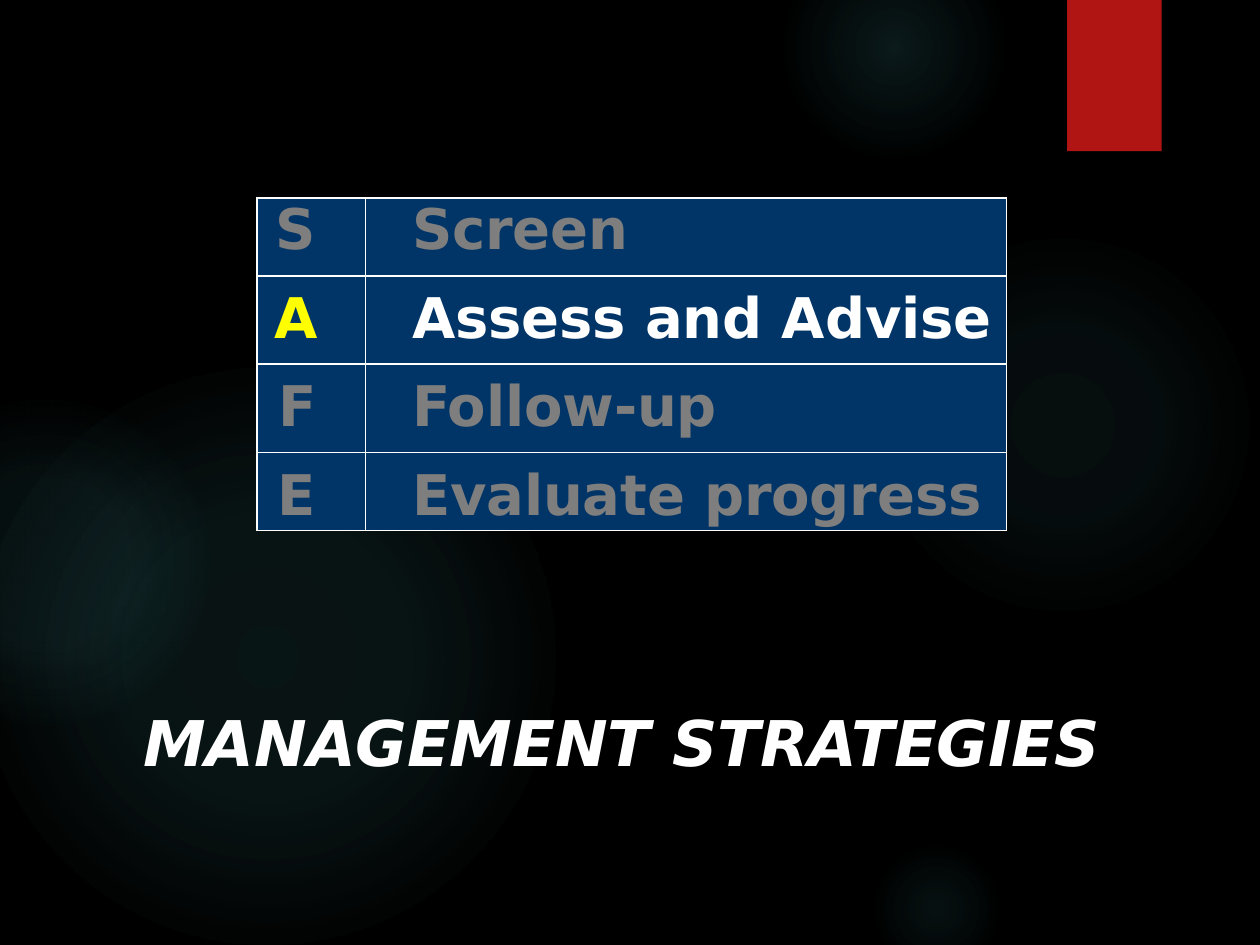
from lxml.etree import SubElement
from pptx import Presentation
from pptx.dml.color import RGBColor
from pptx.enum.shapes import MSO_SHAPE
from pptx.oxml import parse_xml
from pptx.oxml.ns import nsdecls, qn
from pptx.util import Inches, Pt

COLORS = {
    "background": "000000",
    "glow": "50B9C1",
    "ribbon": "B01513",
    "panel": "013567",
    "muted": "7E7E7E",
    "accent": "FFFF00",
    "white": "FFFFFF",
}


def rgb(name):
    return RGBColor.from_string(COLORS[name])


class SlideBuilder:
    font = "DejaVu Sans"

    def __init__(self, slide):
        self.s = slide
        fill = slide.background.fill
        fill.solid()
        fill.fore_color.rgb = rgb("background")

    def shape(self, kind, left, top, width, height, color):
        sp = self.s.shapes.add_shape(
            kind, Inches(left), Inches(top), Inches(width), Inches(height))
        sp.shadow.inherit = False
        sp.fill.solid()
        sp.fill.fore_color.rgb = rgb(color)
        sp.line.fill.background()
        return sp

    def glow(self, left, top, size, stops):
        """Circle fading outwards; stops are (position %, opacity %)."""
        sp = self.shape(MSO_SHAPE.OVAL, left, top, size, size, "glow")
        gs = "".join(
            f'<a:gs pos="{pos * 1000}"><a:srgbClr val="{COLORS["glow"]}">'
            f'<a:alpha val="{alpha * 1000}"/></a:srgbClr></a:gs>'
            for pos, alpha in stops)
        grad = parse_xml(
            f'<a:gradFill {nsdecls("a")} rotWithShape="1"><a:gsLst>{gs}</a:gsLst>'
            '<a:path path="circle"><a:fillToRect l="50000" t="50000" '
            'r="50000" b="50000"/></a:path></a:gradFill>')
        spPr = sp.fill._xPr
        spPr.replace(spPr.find(qn("a:solidFill")), grad)

    def ribbon(self, left, top, width, height):
        sp = self.shape(MSO_SHAPE.RECTANGLE, left, top, width, height, "ribbon")
        effects = sp._element.spPr.find(qn("a:effectLst"))
        shadow = SubElement(
            effects, qn("a:outerShdw"), blurRad=str(Pt(3)), dist=str(Pt(2)),
            dir="5400000", rotWithShape="0")
        clr = SubElement(shadow, qn("a:srgbClr"), val=COLORS["background"])
        SubElement(clr, qn("a:alpha"), val="45000")

    def text(self, p, text, size, color, indent, before, spacing=0, italic=False):
        p.space_before = Pt(before)
        p._p.get_or_add_pPr().set("marL", str(Inches(indent)))
        r = p.add_run()
        r.text = text
        f = r.font
        f.name, f.size, f.bold, f.italic = self.font, Pt(size), True, italic
        f.color.rgb = rgb(color)
        r._r.get_or_add_rPr().set("spc", str(round(spacing * 100)))

    def title(self, text, left, top, width, height):
        tf = self.s.shapes.add_textbox(
            Inches(left), Inches(top), Inches(width), Inches(height)).text_frame
        tf.word_wrap = True
        tf.margin_left = tf.margin_right = tf.margin_bottom = 0
        tf.margin_top = Inches(0.01)
        self.text(tf.paragraphs[0], text, 36, "white", 0.01, 1, -0.1, True)

    def table(self, left, top, widths, heights, rows):
        """Rows are (letter, letter indent, letter colour, label, label colour)."""
        table = self.s.shapes.add_table(
            len(rows), len(widths), Inches(left), Inches(top),
            Inches(sum(widths)), Inches(sum(heights))).table
        table.first_row = table.horz_banding = False
        for column, width in zip(table.columns, widths):
            column.width = Inches(width)
        for i, (letter, indent, mark, label, color) in enumerate(rows):
            table.rows[i].height = Inches(heights[i])
            first, last = i == 0, i == len(rows) - 1
            parts = [(letter, mark, indent, 0), (label, color, 0.37, -0.1)]
            for j, (text, tone, left_indent, spacing) in enumerate(parts):
                cell = table.cell(i, j)
                cell.margin_left = cell.margin_right = cell.margin_bottom = 0
                cell.margin_top = Inches(0 if first else 0.08)
                cell.fill.solid()
                cell.fill.fore_color.rgb = rgb("panel")
                p = cell.text_frame.paragraphs[0]
                if last:
                    p.line_spacing = Pt(37.8)
                self.text(p, text, 32, tone, left_indent,
                          0.2 if first else 6, spacing)


def main():
    prs = Presentation()
    prs.slide_width, prs.slide_height = Inches(10), Inches(7.5)
    b = SlideBuilder(prs.slides.add_slide(prs.slide_layouts[6]))

    # Background glows
    b.glow(6.89, 1.83, 3.08, [(0, 7), (36, 6), (69, 0)])
    b.glow(6.22, -0.5, 1.75, [(0, 14), (36, 7), (73, 0)])
    b.glow(6.89, 6.67, 1.08, [(0, 9), (36, 5), (66, 0)])
    b.glow(-0.17, 2.92, 4.58, [(0, 11), (36, 10), (75, 0)])
    b.glow(-0.92, 3.17, 2.58, [(0, 8), (36, 8), (72, 0)])

    # Corner ribbon
    b.ribbon(8.47, 0, 0.75, 1.2)

    # Title
    b.title("MANAGEMENT STRATEGIES", 1.13, 5.57, 7.73, 0.63)

    # SAFE steps, with the current one highlighted
    b.table(2.04, 1.57, [0.86, 5.09], [0.62, 0.7, 0.7, 0.62], [
        ("S", 0.15, "muted", "Screen", "muted"),
        ("A", 0.14, "accent", "Assess and Advise", "white"),
        ("F", 0.17, "muted", "Follow-up", "muted"),
        ("E", 0.16, "muted", "Evaluate progress", "muted"),
    ])

    prs.save("out.pptx")


if __name__ == "__main__":
    main()
